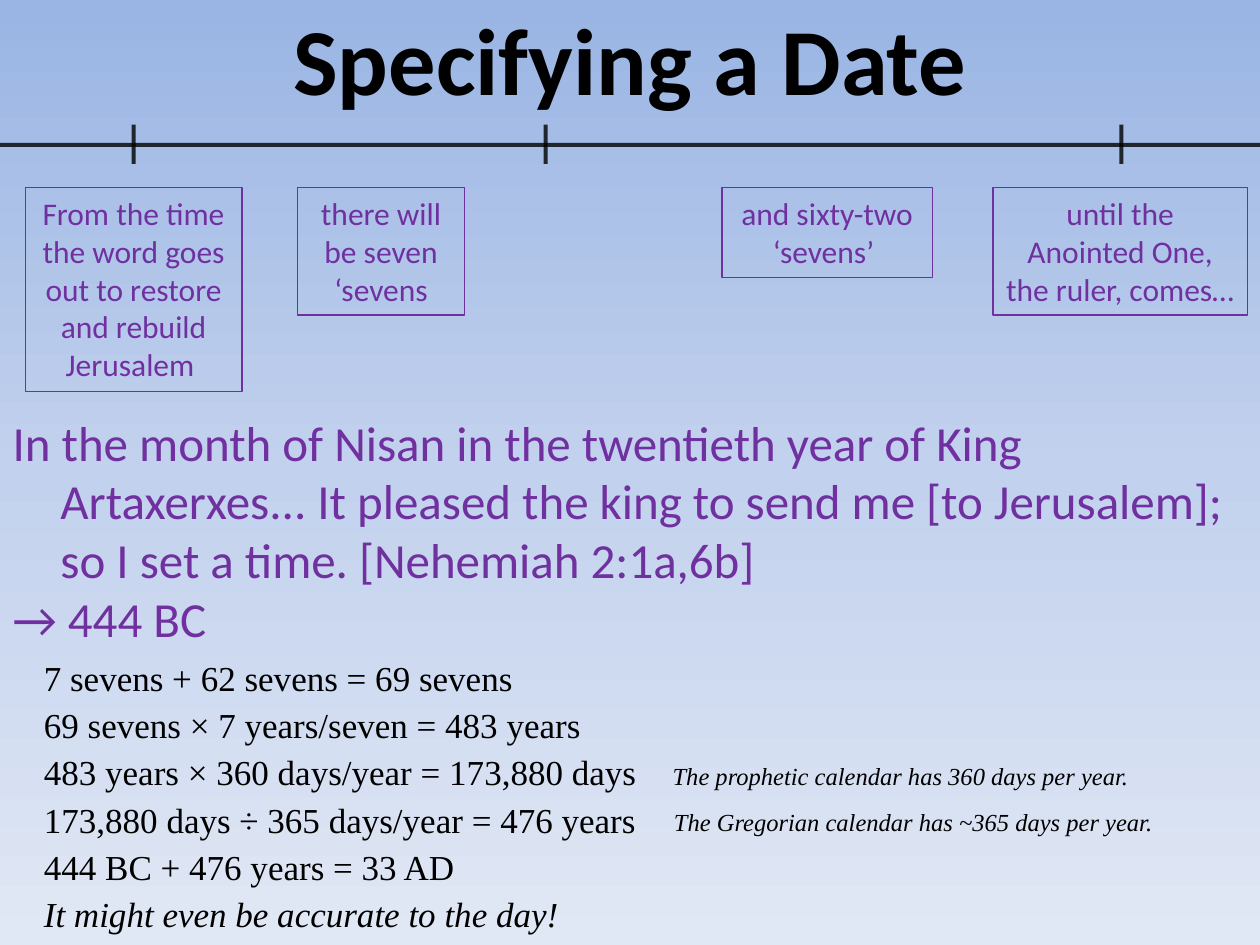
from copy import deepcopy

from pptx import Presentation
from pptx.dml.color import RGBColor
from pptx.enum.shapes import MSO_CONNECTOR, MSO_SHAPE
from pptx.enum.text import MSO_ANCHOR, MSO_AUTO_SIZE, PP_ALIGN
from pptx.oxml.ns import qn
from pptx.util import Inches, Pt
from lxml.etree import SubElement

# Content
COLORS = {"text": "000000", "accent": "7030A0"}
BACKGROUND = [(0, "9AB5E4"), (0.5, "C2D1ED"), (1, "E1E8F5")]
TITLE = "Specifying a Date"
QUOTES = [
    "In the month of Nisan in the twentieth year of King Artaxerxes... "
    "It pleased the king to send me [to Jerusalem]; so I set a time. [Nehemiah 2:1a,6b]",
    "→ 444 BC",
]
CALCULATION = [
    "7 sevens + 62 sevens = 69 sevens",
    "69 sevens × 7 years/seven = 483 years",
    "483 years × 360 days/year = 173,880 days",
    "173,880 days ÷ 365 days/year = 476 years",
    "444 BC + 476 years = 33 AD",
    "It might even be accurate to the day!",
]
NOTES = [  # text, left, top, width
    ("The prophetic calendar has 360 days per year.", 5.24, 5.99, 3.96),
    ("The Gregorian calendar has ~365 days per year.", 5.25, 6.36, 4.15),
]
PHRASES = [  # text, left, width, height
    ("From the time the word goes out to restore and rebuild Jerusalem ", 0.2, 1.72, 1.62),
    ("there will be seven ‘sevens", 2.36, 1.33, 1.01),
    ("and sixty-two ‘sevens’ ", 5.73, 1.67, 0.71),
    ("until the Anointed One, the ruler, comes…", 7.88, 2.02, 1.01),
]
TICKS = [1.06, 4.33, 8.9]
AXIS_TOP, TICK_TOP, TICK_BOTTOM, PHRASE_TOP = 1.15, 0.99, 1.3, 1.49


def color(name):
    return RGBColor.from_string(COLORS[name])


def place(shape, left, top, width, height):
    shape.left, shape.top = Inches(left), Inches(top)
    shape.width, shape.height = Inches(width), Inches(height)


def write(shape, lines, size, font="Calibri", ink="text", align=PP_ALIGN.LEFT):
    frame = shape.text_frame
    frame.text = "\n".join(lines)
    frame.word_wrap = True
    frame.auto_size = MSO_AUTO_SIZE.NONE
    for para in frame.paragraphs:
        para.alignment = align
        para.space_before = Pt(0)
        para.font.size = Pt(size)
        para.font.name = font
        para.font.color.rgb = color(ink)
    return frame


def add_line(page, x1, y1, x2, y2):
    line = page.shapes.add_connector(
        MSO_CONNECTOR.STRAIGHT, Inches(x1), Inches(y1), Inches(x2), Inches(y2))
    line.line.width = Pt(2.25)
    line.line.color.rgb = color("text")
    properties = line._element.spPr
    SubElement(properties.find(".//" + qn("a:srgbClr")), qn("a:alpha"), val="80000")
    SubElement(properties, qn("a:effectLst"))


deck = Presentation()
deck.slide_width, deck.slide_height = Inches(10), Inches(7.5)
page = deck.slides.add_slide(deck.slide_layouts[1])

# Background gradient, top to bottom
fill = page.background.fill
fill.gradient()
fill.gradient_angle = 270
stop_list = page.element.find(".//" + qn("a:gsLst"))
stop_list.append(deepcopy(stop_list[0]))
for stop, (position, shade) in zip(fill.gradient_stops, BACKGROUND):
    stop.position = position
    stop.color.rgb = RGBColor.from_string(shade)

# Title
title = page.shapes.title
place(title, 0, 0, 10, 0.92)
frame = write(title, [TITLE], 54, align=PP_ALIGN.CENTER)
frame.vertical_anchor = MSO_ANCHOR.MIDDLE
frame.paragraphs[0].font.bold = True

# Quotation with hanging indent
body = page.placeholders[1]
place(body, 0, 3.22, 10, 1.94)
for para in write(body, QUOTES, 28, ink="accent").paragraphs:
    properties = para._p.get_or_add_pPr()
    properties.set("marL", str(Inches(0.38)))
    properties.set("indent", str(-Inches(0.38)))
    bullet = properties.makeelement(qn("a:buNone"), {})
    properties.find(qn("a:defRPr")).addprevious(bullet)

# Calendar notes
for text, left, top, width in NOTES:
    box = page.shapes.add_textbox(Inches(left), Inches(top), Inches(width), Inches(0.34))
    write(box, [text], 14, "Times New Roman").paragraphs[0].font.italic = True

# Calculation
box = page.shapes.add_textbox(Inches(0.25), Inches(5.16), Inches(5), Inches(2.34))
paragraphs = write(box, CALCULATION, 20, "Times New Roman").paragraphs
for index, para in enumerate(paragraphs):
    para.space_before = Pt(3 if index else 18)
paragraphs[-1].font.italic = True

# Timeline
add_line(page, 0, AXIS_TOP, 10, AXIS_TOP)
for x in TICKS:
    add_line(page, x, TICK_TOP, x, TICK_BOTTOM)

# Phrases under the timeline
for text, left, width, height in PHRASES:
    box = page.shapes.add_shape(
        MSO_SHAPE.RECTANGLE, Inches(left), Inches(PHRASE_TOP), Inches(width), Inches(height))
    box.shadow.inherit = False
    box.fill.background()
    box.line.color.rgb = color("accent")
    box.line.width = Pt(0.75)
    frame = write(box, [text], 18, ink="accent", align=PP_ALIGN.CENTER)
    frame.vertical_anchor = MSO_ANCHOR.TOP

deck.save("out.pptx")
